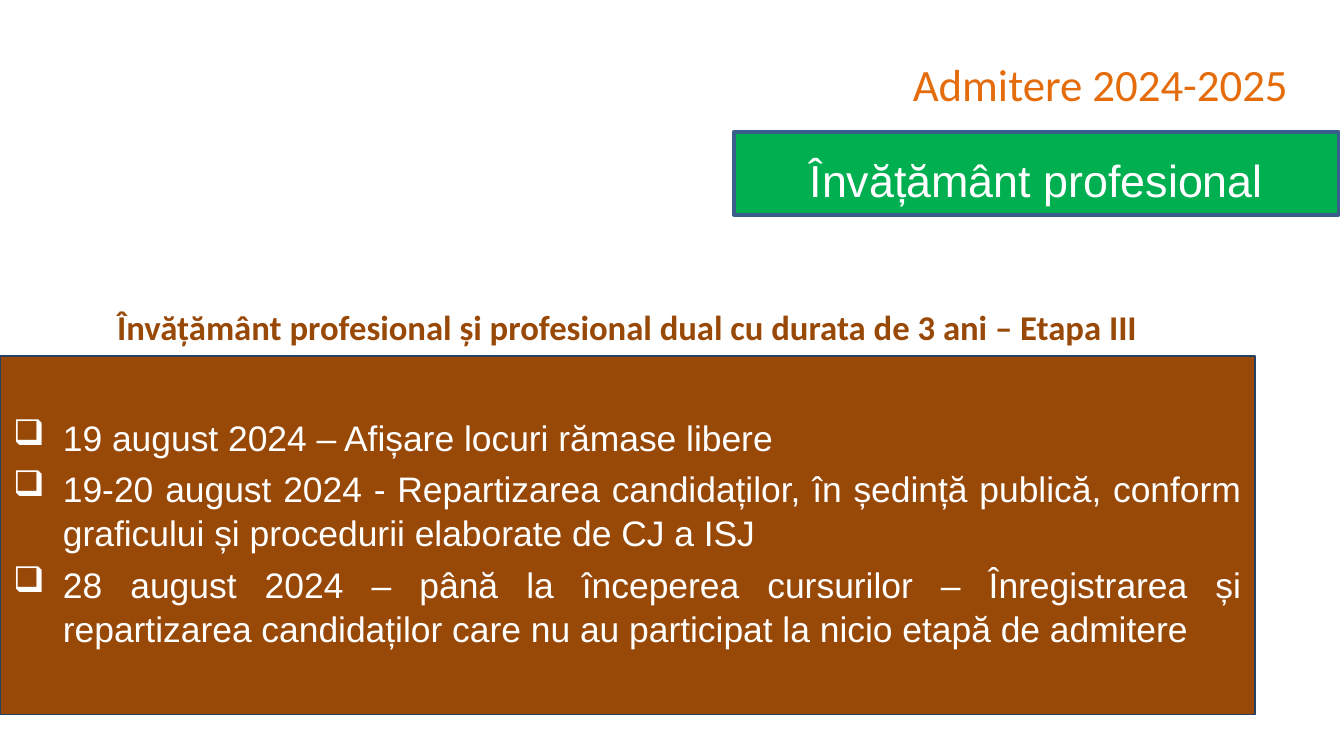
from pptx import Presentation
from pptx.dml.color import RGBColor
from pptx.enum.shapes import MSO_SHAPE
from pptx.enum.text import MSO_ANCHOR, PP_ALIGN
from pptx.util import Cm, Pt
from lxml import etree
from pptx.oxml.ns import qn

RECT = MSO_SHAPE.RECTANGLE
TOP, MIDDLE, BOTTOM = MSO_ANCHOR.TOP, MSO_ANCHOR.MIDDLE, MSO_ANCHOR.BOTTOM
CENTER, RIGHT, JUSTIFY = PP_ALIGN.CENTER, PP_ALIGN.RIGHT, PP_ALIGN.JUSTIFY

STEPS = [
    "19 august 2024 – Afișare locuri rămase libere",
    "19-20 august 2024 - Repartizarea candidaților, în ședință publică, "
    "conform graficului și procedurii elaborate de CJ a ISJ",
    "28 august 2024 – până la începerea cursurilor – Înregistrarea și "
    "repartizarea candidaților care nu au participat la nicio etapă de admitere",
]


def rgb(color):
    return RGBColor.from_string(color)


def set_frame(tf, anchor, top=0.13):
    tf.word_wrap = True
    tf.vertical_anchor = anchor
    tf.margin_top = Cm(top)


def set_paragraph(p, text, align, size, font, color, bold=False):
    p.text = text
    p.alignment = align
    for r in p.runs:
        r.font.size = Pt(size)
        r.font.name = font
        r.font.bold = bold
        r.font.color.rgb = rgb(color)


def add_label(s, box, text, anchor, align, size, color, bold=False):
    tf = s.shapes.add_textbox(*map(Cm, box)).text_frame
    set_frame(tf, anchor)
    set_paragraph(tf.paragraphs[0], text, align, size, "Calibri", color, bold)


def add_panel(s, box, fill, line, width):
    sp = s.shapes.add_shape(RECT, *map(Cm, box))
    sp.shadow.inherit = False
    sp.fill.solid()
    sp.fill.fore_color.rgb = rgb(fill)
    sp.line.color.rgb = rgb(line)
    sp.line.width = Pt(width)
    return sp


def add_bullet(p, char, indent):
    pPr = p._p.get_or_add_pPr()
    pPr.set("marL", str(Cm(indent)))
    pPr.set("indent", str(-Cm(indent)))
    etree.SubElement(pPr, qn("a:buChar")).set("char", char)


def add_steps(s, box, steps):
    tf = add_panel(s, box, "984807", "254061", 0.75).text_frame
    set_frame(tf, TOP, 1.1)
    for i, step in enumerate(steps):
        p = tf.paragraphs[0] if i == 0 else tf.add_paragraph()
        add_bullet(p, "❑", 0.94)
        set_paragraph(p, step, JUSTIFY, 19, "Arial", "FFFFFF")
        p.line_spacing = 1.04
        p.space_before = Pt(3.8 if i else 0)


def add_banner(s, box, text):
    tf = add_panel(s, box, "00B050", "3A5F8C", 2).text_frame
    set_frame(tf, MIDDLE, 0.37)
    set_paragraph(tf.paragraphs[0], text, CENTER, 24, "Arial", "FFFFFF")


def main():
    prs = Presentation()
    prs.slide_width, prs.slide_height = Cm(25.4), Cm(14.29)
    s = prs.slides.add_slide(prs.slide_layouts[6])
    add_label(s, (1.27, 0.66, 23.32, 1.83), "Admitere 2024-2025",
              MIDDLE, RIGHT, 24, "E46C0A")
    add_label(s, (1.27, 5.13, 21.18, 1.57),
              "Învățământ profesional și profesional dual cu durata de 3 ani – Etapa III",
              BOTTOM, CENTER, 18.6, "984807", True)
    add_steps(s, (0, 6.73, 23.72, 6.78), STEPS)
    add_banner(s, (13.87, 2.49, 11.43, 1.57), "Învățământ profesional")
    prs.save("out.pptx")


if __name__ == "__main__":
    main()
